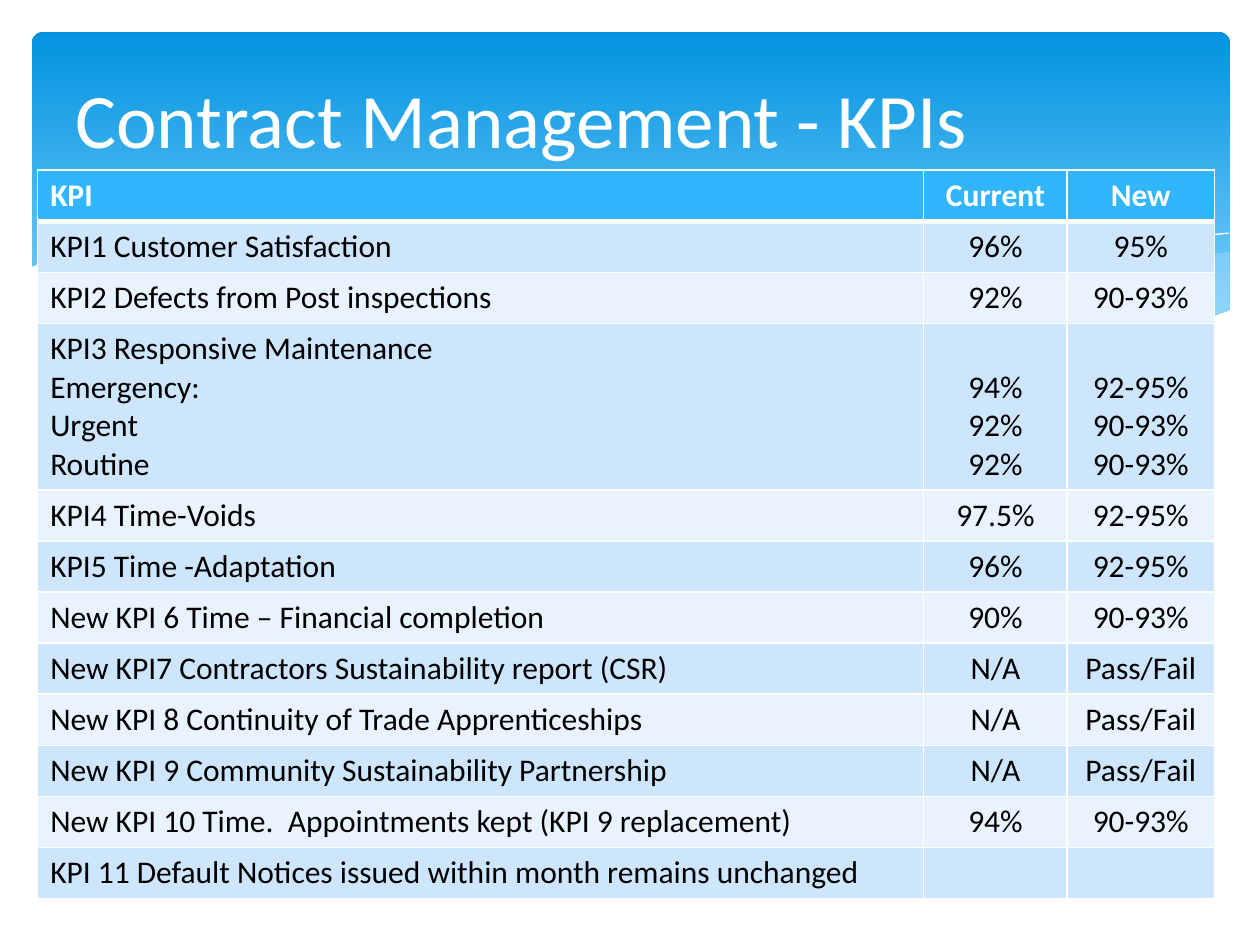
from lxml import etree
from pptx import Presentation
from pptx.dml.color import RGBColor
from pptx.enum.shapes import MSO_SHAPE
from pptx.enum.text import MSO_ANCHOR, PP_ALIGN
from pptx.oxml.ns import qn
from pptx.util import Cm, Pt

ROUNDED = MSO_SHAPE.ROUNDED_RECTANGLE
MIDDLE, BOTTOM = MSO_ANCHOR.MIDDLE, MSO_ANCHOR.BOTTOM
LEFT, CENTER = PP_ALIGN.LEFT, PP_ALIGN.CENTER
WHITE, BLACK = "FFFFFF", "000000"
HEADER_BLUE, ROW_BLUES = "31B6FD", ("CEE5FE", "E8F3FF")
UNITS_PER_CM = 100

# Wave outlines in cm from the banner's top left: points, fill, opacity in %
WAVE_BANDS = [
    ([(24.15, 4.44), (23.44, 4.54), (22.37, 4.77), (21.23, 5.02), (19.81, 5.38),
      (17.88, 5.79), (16.15, 6.09), (17.27, 6.24), (18.59, 6.37), (20.04, 6.42),
      (21.28, 6.35), (22.35, 6.19), (23.29, 5.94), (24.15, 5.63)], "C6E7FC", 29),
    ([(22.04, 6.29), (20.62, 6.09), (19.05, 5.81), (17.29, 5.46), (15.34, 5),
      (13.81, 4.64), (12.42, 4.39), (11.17, 4.21), (10.03, 4.11), (8.53, 4.06),
      (7.31, 4.14), (6.62, 4.21), (8.05, 4.41), (9.62, 4.72), (11.83, 5.25),
      (13.74, 5.66), (15.46, 5.99), (17.01, 6.22), (18.36, 6.37), (19.86, 6.42),
      (21.13, 6.4)], "C6E7FC", 40),
]
WAVE_LINES = [
    [(7.21, 4.31), (8.1, 4.19), (9.55, 4.11), (11.27, 4.16), (12.9, 4.29),
     (14.8, 4.54), (17.01, 4.92), (19.55, 5.48), (22.4, 6.27)],
    [(14.93, 5.89), (17.01, 5.33), (19.07, 4.85), (21.36, 4.41), (22.83, 4.19),
     (24.13, 4.06)],
]
WHITE_WAVE = [
    (24.18, 5.61), (23.49, 5.86), (22.47, 6.14), (21.28, 6.32), (19.91, 6.4),
    (18.26, 6.32), (16.33, 6.09), (14.07, 5.71), (11.43, 5.13), (9.29, 4.62),
    (7.39, 4.29), (5.71, 4.08), (4.26, 4.03), (2.71, 4.08), (1.52, 4.26),
    (0.53, 4.52), (-0.06, 4.77), (-0.06, 7.72), (24.18, 7.72)]

KPI_ROWS = [
    ("KPI", "Current", "New"),
    ("KPI1 Customer Satisfaction", "96%", "95%"),
    ("KPI2 Defects from Post inspections", "92%", "90-93%"),
    ("KPI3 Responsive Maintenance\nEmergency:\nUrgent\nRoutine",
     "94%\n92%\n92%", "92-95%\n90-93%\n90-93%"),
    ("KPI4 Time-Voids", "97.5%", "92-95%"),
    ("KPI5 Time -Adaptation", "96%", "92-95%"),
    ("New KPI 6 Time – Financial completion", "90%", "90-93%"),
    ("New KPI7 Contractors Sustainability report (CSR)", "N/A", "Pass/Fail"),
    ("New KPI 8 Continuity of Trade Apprenticeships", "N/A", "Pass/Fail"),
    ("New KPI 9 Community Sustainability Partnership", "N/A", "Pass/Fail"),
    ("New KPI 10 Time.  Appointments kept (KPI 9 replacement)", "94%", "90-93%"),
    ("KPI 11 Default Notices issued within month remains unchanged", "", ""),
]
COLUMN_SHARES = (0.753, 0.122, 0.125)
ROW_HEIGHT, EXTRA_LINE = 1.03, 0.775


def rgb(hex_colour):
    return RGBColor.from_string(hex_colour)


def write(frame, text, align, colour, **font_values):
    frame.text = text
    for paragraph in frame.paragraphs:
        paragraph.alignment = align
        for run in paragraph.runs:
            run.font.color.rgb = rgb(colour)
            for key, value in {"name": "Calibri", **font_values}.items():
                setattr(run.font, key, value)


def add_wave(slide, left, top, points, fill=None, opacity=100):
    """Draw a filled band, or an open white hairline when there is no fill."""
    (start_x, start_y), *rest = [
        (round((left + x) * UNITS_PER_CM), round((top + y) * UNITS_PER_CM))
        for x, y in points]
    outline = slide.shapes.build_freeform(start_x, start_y, scale=Cm(1) / UNITS_PER_CM)
    outline.add_line_segments(rest, close=fill is not None)
    wave = outline.convert_to_shape()
    wave.shadow.inherit = False
    if fill is None:
        wave.fill.background()
        wave.line.color.rgb = rgb(WHITE)
        wave.line.width = Pt(0)
        return
    wave.line.fill.background()
    wave.fill.solid()
    wave.fill.fore_color.rgb = rgb(fill)
    if opacity < 100:
        colour = wave.fill._xPr.find(qn("a:solidFill"))[0]
        etree.SubElement(colour, qn("a:alpha"), val=str(opacity * 1000))


def add_banner(slide, left, top, width, height):
    # Gradient panel
    panel = slide.shapes.add_shape(ROUNDED, Cm(left), Cm(top), Cm(width), Cm(height))
    panel.adjustments[0] = 0.034
    panel.shadow.inherit = False
    panel.line.fill.background()
    panel.fill.gradient()
    panel.fill.gradient_angle = 270
    stops = ((0, "0293E0"), (0.9, "83D3FE"))
    for stop, (position, colour) in zip(panel.fill.gradient_stops, stops):
        stop.position = position
        stop.color.rgb = rgb(colour)

    # Waves along the lower edge
    for points, fill, opacity in WAVE_BANDS:
        add_wave(slide, left, top, points, fill, opacity)
    for points in WAVE_LINES:
        add_wave(slide, left, top, points)
    add_wave(slide, left, top, WHITE_WAVE, WHITE)


def add_title(slide, left, top, width, height):
    title = slide.shapes.add_textbox(Cm(left), Cm(top), Cm(width), Cm(height))
    title.text_frame.word_wrap = True
    title.text_frame.vertical_anchor = MIDDLE
    write(title.text_frame, "Contract Management - KPIs", LEFT, WHITE, size=Pt(44))


def set_borders(cell, bottom_width):
    properties = cell._tc.get_or_add_tcPr()
    for side, width in {"L": 1, "R": 1, "T": 1, "B": bottom_width}.items():
        border = etree.SubElement(properties, qn(f"a:ln{side}"), w=str(Pt(width)))
        solid = etree.SubElement(border, qn("a:solidFill"))
        etree.SubElement(solid, qn("a:srgbClr"), val=WHITE)


def add_kpi_table(slide, left, top, width):
    heights = [ROW_HEIGHT + EXTRA_LINE * row[0].count("\n") for row in KPI_ROWS]
    table = slide.shapes.add_table(
        len(KPI_ROWS), len(COLUMN_SHARES),
        Cm(left), Cm(top), Cm(width), Cm(sum(heights))).table
    for column, share in zip(table.columns, COLUMN_SHARES):
        column.width = Cm(width * share)

    for r, (texts, height) in enumerate(zip(KPI_ROWS, heights)):
        table.rows[r].height = Cm(height)
        header = r == 0
        for c, text in enumerate(texts):
            cell = table.cell(r, c)
            set_borders(cell, 3 if header else 1)
            cell.fill.solid()
            cell.fill.fore_color.rgb = rgb(HEADER_BLUE if header else ROW_BLUES[(r - 1) % 2])
            # Values line up with the last lines of a taller row
            cell.vertical_anchor = BOTTOM
            write(cell.text_frame, text, CENTER if c else LEFT,
                  WHITE if header else BLACK, size=Pt(18), bold=header)


def main():
    deck = Presentation()
    deck.slide_width, deck.slide_height = Cm(25.4), Cm(19.05)
    slide = deck.slides.add_slide(deck.slide_layouts[6])
    add_banner(slide, 0.64, 0.64, 24.16, 6.86)
    add_title(slide, 1.27, 0.94, 22.86, 2.87)
    add_kpi_table(slide, 0.76, 3.43, 23.72)
    deck.save("out.pptx")


if __name__ == "__main__":
    main()
